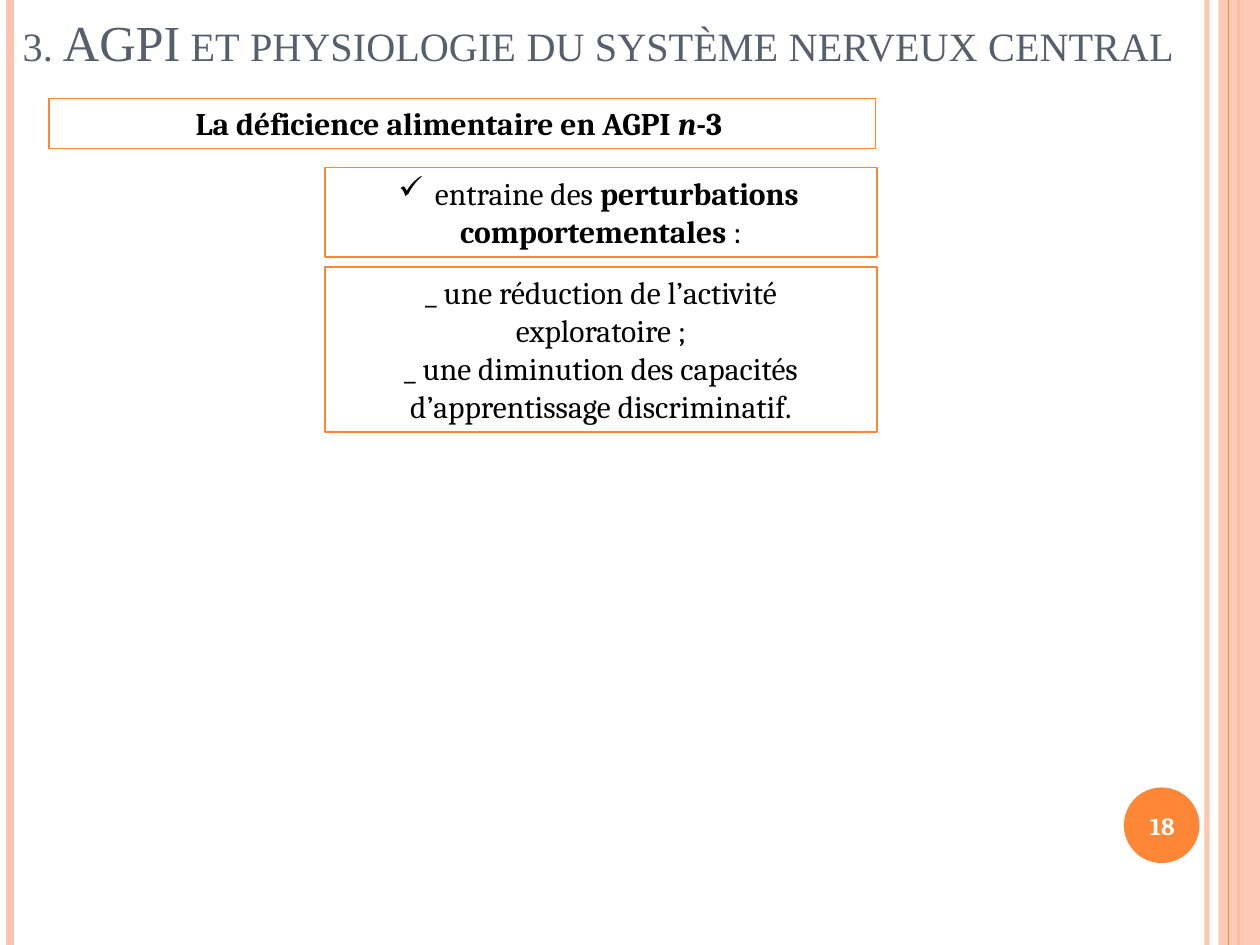
from dataclasses import dataclass

from lxml import etree
from pptx import Presentation
from pptx.dml.color import RGBColor
from pptx.enum.shapes import MSO_CONNECTOR, MSO_SHAPE
from pptx.enum.text import MSO_ANCHOR, PP_ALIGN
from pptx.oxml.ns import qn
from pptx.util import Inches, Pt

ORANGE = RGBColor(0xFE, 0x86, 0x37)
PEACH = RGBColor(0xFE, 0xC3, 0xAE)
SLATE = RGBColor(0x57, 0x5F, 0x6D)
BLACK = RGBColor(0, 0, 0)
WHITE = RGBColor(0xFF, 0xFF, 0xFF)
STRAIGHT = MSO_CONNECTOR.STRAIGHT
RECTANGLE = MSO_SHAPE.RECTANGLE
ELLIPSE = MSO_SHAPE.OVAL
LEFT, CENTER = PP_ALIGN.LEFT, PP_ALIGN.CENTER
TOP, MIDDLE = MSO_ANCHOR.TOP, MSO_ANCHOR.MIDDLE
PAGE_HEIGHT = 7.5
BODY = {"name": "Cambria", "size": Pt(18)}


@dataclass
class Stripe:
    x: float
    color: RGBColor
    weight: float
    opacity: int = 100


@dataclass
class Span:
    text: str
    bold: bool = False
    italic: bool = False


@dataclass
class Panel:
    left: float
    top: float
    width: float
    height: float
    paragraphs: list[list[Span]]
    bullet: str = ""


STRIPES_BEHIND = [
    Stripe(9.58, PEACH, 3, 93),
    Stripe(0.08, PEACH, 4.5),
    Stripe(9.83, ORANGE, 1.5),
]
STRIPE_FRONT = Stripe(9.75, ORANGE, 0.75)

PANELS = [
    Panel(0.39, 0.78, 6.56, 0.4, [[
        Span("La déficience alimentaire en AGPI ", bold=True),
        Span("n", bold=True, italic=True),
        Span("-3 ", bold=True),
    ]]),
    Panel(2.58, 1.33, 4.38, 0.71, [[
        Span(" entraine des "),
        Span("perturbations comportementales ", bold=True),
        Span(":"),
    ]], bullet="✓"),
    Panel(2.58, 2.12, 4.38, 1.31, [
        [Span("_ une réduction de l’activité exploratoire ;")],
        [Span("_ une diminution des capacités d’apprentissage discriminatif.")],
    ]),
]


def set_opacity(fill_parent, percent: int) -> None:
    color = fill_parent.find(f"{qn('a:solidFill')}/{qn('a:srgbClr')}")
    etree.SubElement(color, qn("a:alpha"), val=str(percent * 1000))


def draw_stripe(page, stripe: Stripe) -> None:
    x = Inches(stripe.x)
    line = page.shapes.add_connector(STRAIGHT, x, 0, x, Inches(PAGE_HEIGHT))
    line.line.color.rgb = stripe.color
    line.line.width = Pt(stripe.weight)
    properties = line._element.spPr
    if stripe.opacity < 100:
        set_opacity(properties.find(qn("a:ln")), stripe.opacity)
    etree.SubElement(properties, qn("a:effectLst"))


def draw_solid(page, kind, bounds: tuple, color: RGBColor):
    shape = page.shapes.add_shape(kind, *map(Inches, bounds))
    shape.shadow.inherit = False
    shape.fill.solid()
    shape.fill.fore_color.rgb = color
    shape.line.fill.background()
    return shape


def add_span(para, text: str, color: RGBColor, formats: dict):
    span = para.add_run()
    span.text = text
    for name, value in formats.items():
        setattr(span.font, name, value)
    span.font.color.rgb = color
    return span


def draw_panel(page, panel: Panel) -> None:
    bounds = panel.left, panel.top, panel.width, panel.height
    box = page.shapes.add_shape(RECTANGLE, *map(Inches, bounds))
    box.shadow.inherit = False
    box.fill.background()
    box.line.color.rgb = ORANGE
    box.line.width = Pt(0.75)
    frame = box.text_frame
    frame.word_wrap = True
    frame.vertical_anchor = TOP
    for index, spans in enumerate(panel.paragraphs):
        para = frame.add_paragraph() if index else frame.paragraphs[0]
        para.alignment = CENTER
        if panel.bullet:
            properties = para._p.get_or_add_pPr()
            etree.SubElement(properties, qn("a:buChar"), char=panel.bullet)
        for span in spans:
            formats = BODY | {"bold": span.bold, "italic": span.italic}
            add_span(para, span.text, BLACK, formats)


def draw_title(page) -> None:
    title = page.shapes.title
    bounds = {"left": 0.08, "top": 0.05, "width": 9.69, "height": 0.56}
    for name, value in bounds.items():
        setattr(title, name, Inches(value))
    frame = title.text_frame
    frame.word_wrap = True
    frame.vertical_anchor = MIDDLE
    para = frame.paragraphs[0]
    para.alignment = LEFT
    span = add_span(
        para,
        "3. AGPI et physiologie du système nerveux central",
        SLATE,
        {"name": "Times New Roman", "size": Pt(28.8)},
    )
    span.font._element.set("cap", "small")


def draw_page_number(page) -> None:
    draw_solid(page, ELLIPSE, (8.92, 6.25, 0.6, 0.6), ORANGE)
    box = page.shapes.add_textbox(*map(Inches, (8.89, 6.27, 0.67, 0.57)))
    frame = box.text_frame
    frame.word_wrap = True
    frame.vertical_anchor = MIDDLE
    para = frame.paragraphs[0]
    para.alignment = CENTER
    add_span(para, "18", WHITE, BODY | {"size": Pt(14), "bold": True})


def main() -> None:
    deck = Presentation()
    deck.slide_width = Inches(10)
    deck.slide_height = Inches(PAGE_HEIGHT)
    page = deck.slides.add_slide(deck.slide_layouts[5])
    for stripe in STRIPES_BEHIND:
        draw_stripe(page, stripe)
    band = draw_solid(page, RECTANGLE, (9.67, 0, 0.33, PAGE_HEIGHT), PEACH)
    set_opacity(band._element.spPr, 87)
    draw_stripe(page, STRIPE_FRONT)
    draw_page_number(page)
    draw_title(page)
    for panel in PANELS:
        draw_panel(page, panel)
    deck.save("out.pptx")


if __name__ == "__main__":
    main()
